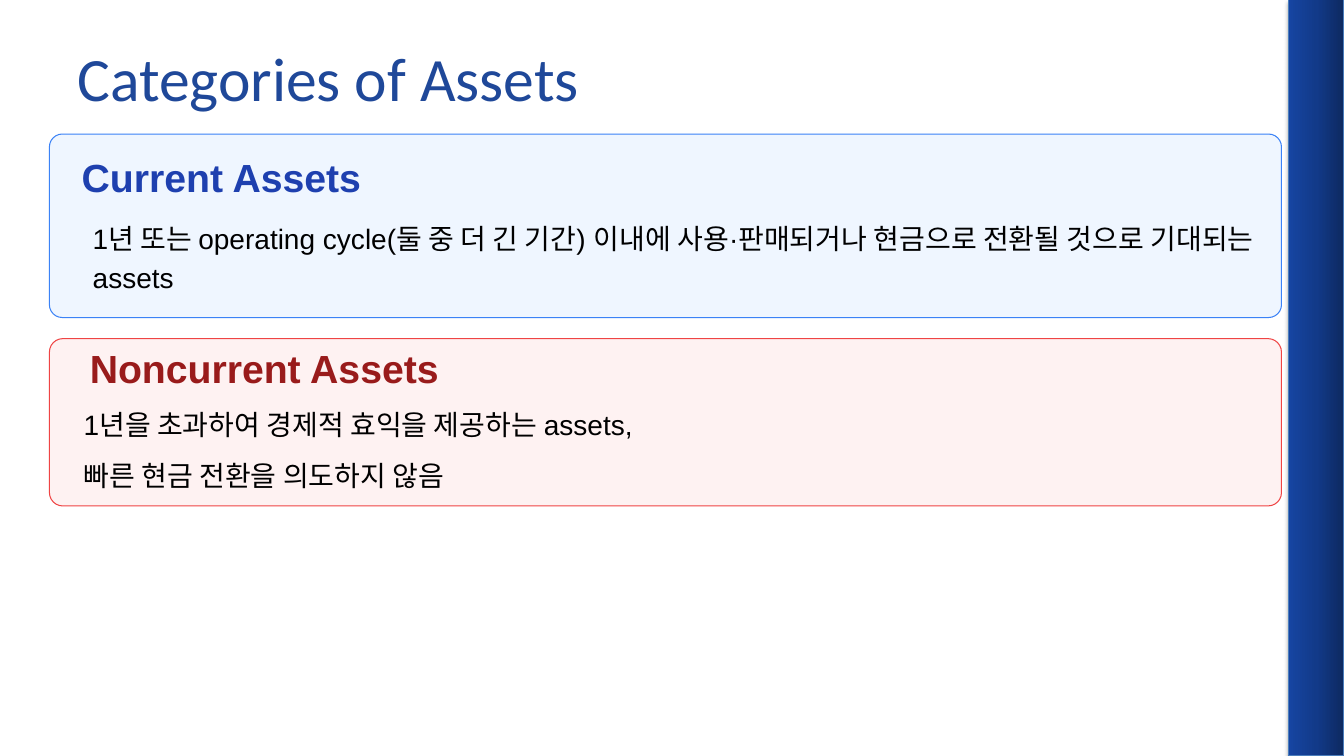
import copy

import pptx
import pptx.dml.color
import pptx.enum.shapes
import pptx.enum.text
import pptx.oxml
import pptx.oxml.ns
import pptx.util

SLIDE_WIDTH = pptx.util.Inches(13.33)
SLIDE_HEIGHT = pptx.util.Inches(7.5)
CARD_LEFT, CARD_WIDTH = 3.68, 91.67
TEXT_WIDTH = 89.72
SHADOW = (
    '<a:effectLst xmlns:a="http://schemas.openxmlformats.org/drawingml/2006/main">'
    '<a:outerShdw blurRad="39370" dist="22860" dir="5400000" rotWithShape="0">'
    '<a:srgbClr val="000000"><a:alpha val="35000"/></a:srgbClr>'
    '</a:outerShdw></a:effectLst>'
)


def color(hex_string):
    return pptx.dml.color.RGBColor.from_string(hex_string)


def area(left, top, width, height):
    """Turn percentages of the slide's size into lengths."""
    return (
        int(SLIDE_WIDTH * left / 100),
        int(SLIDE_HEIGHT * top / 100),
        int(SLIDE_WIDTH * width / 100),
        int(SLIDE_HEIGHT * height / 100),
    )


def add_run(paragraph, text, font_name, size, hex_string, bold=False):
    run = paragraph.add_run()
    run.text = text
    run.font.name = font_name
    run.font.size = pptx.util.Pt(size)
    run.font.bold = bold
    run.font.color.rgb = color(hex_string)


def set_title(slide, text):
    title = slide.shapes.title
    title.left, title.top, title.width, title.height = area(5, 4, 90, 12.27)
    frame = title.text_frame
    frame.auto_size = pptx.enum.text.MSO_AUTO_SIZE.NONE
    frame.vertical_anchor = pptx.enum.text.MSO_ANCHOR.MIDDLE
    paragraph = frame.paragraphs[0]
    paragraph.alignment = pptx.enum.text.PP_ALIGN.LEFT
    add_run(paragraph, text, "Calibri", 44, "1F4899")


def add_side_bar(slide):
    bar = slide.shapes.add_shape(
        pptx.enum.shapes.MSO_SHAPE.RECTANGLE, *area(95.87, 0, 4.13, 100))
    bar.fill.gradient()
    bar.fill.gradient_angle = 180
    stop_list = bar._element.spPr.find(".//" + pptx.oxml.ns.qn("a:gsLst"))
    stop_list.insert(1, copy.deepcopy(stop_list[0]))
    stops = ((0, "0D2960"), (0.5, "123A89"), (1, "1645A2"))
    for stop, (position, hex_string) in zip(bar.fill.gradient_stops, stops):
        stop.position = position
        stop.color.rgb = color(hex_string)
    bar.line.color.rgb = color("4B7EBC")
    bar.line.width = pptx.util.Pt(0.75)
    bar._element.spPr.append(pptx.oxml.parse_xml(SHADOW))


def add_card(slide, top, height, corner, fill, line):
    card = slide.shapes.add_shape(
        pptx.enum.shapes.MSO_SHAPE.ROUNDED_RECTANGLE,
        *area(CARD_LEFT, top, CARD_WIDTH, height))
    card.adjustments[0] = corner
    card.shadow.inherit = False
    card.fill.solid()
    card.fill.fore_color.rgb = color(fill)
    card.line.color.rgb = color(line)
    card.line.width = pptx.util.Pt(0.75)


def add_text(slide, left, top, height, lines, line_spacing, space_after,
             size, hex_string, bold=False):
    box = slide.shapes.add_textbox(*area(left, top, TEXT_WIDTH, height))
    frame = box.text_frame
    frame.word_wrap = True
    frame.margin_left = frame.margin_right = 0
    frame.margin_top = frame.margin_bottom = 0
    for index, line in enumerate(lines):
        paragraph = frame.add_paragraph() if index else frame.paragraphs[0]
        if index:
            paragraph.space_before = pptx.util.Pt(4)
        paragraph.line_spacing = pptx.util.Pt(line_spacing)
        paragraph.space_after = pptx.util.Pt(space_after)
        add_run(paragraph, line, "Arial", size, hex_string, bold)


def add_heading(slide, left, top, height, text, line_spacing, space_after, hex_string):
    add_text(slide, left, top, height, [text], line_spacing, space_after,
             28, hex_string, bold=True)


def add_body(slide, left, top, height, lines):
    add_text(slide, left, top, height, lines, 28, 4, 20, "000000")


def main():
    presentation = pptx.Presentation()
    presentation.slide_width = SLIDE_WIDTH
    presentation.slide_height = SLIDE_HEIGHT
    slide = presentation.slides.add_slide(presentation.slide_layouts[5])

    add_side_bar(slide)
    set_title(slide, "Categories of Assets")

    add_card(slide, 17.73, 24.27, 0.07, "EFF6FF", "3B82F6")
    add_heading(slide, 6.08, 22.13, 7.33, "Current Assets", 23.8, 10, "1E40AF")
    add_body(slide, 6.9, 28.53, 10, [
        "1년 또는 operating cycle(둘 중 더 긴 기간) 이내에 사용·판매되거나 "
        "현금으로 전환될 것으로 기대되는 assets",
    ])

    add_card(slide, 44.8, 22.13, 0.08, "FEF2F2", "EF4444")
    add_heading(slide, 6.68, 47.6, 4.13, "Noncurrent Assets", 22.4, 8, "991B1B")
    add_body(slide, 6.23, 53.2, 8.27, [
        "1년을 초과하여 경제적 효익을 제공하는 assets,",
        "빠른 현금 전환을 의도하지 않음",
    ])

    presentation.save("out.pptx")


if __name__ == "__main__":
    main()
